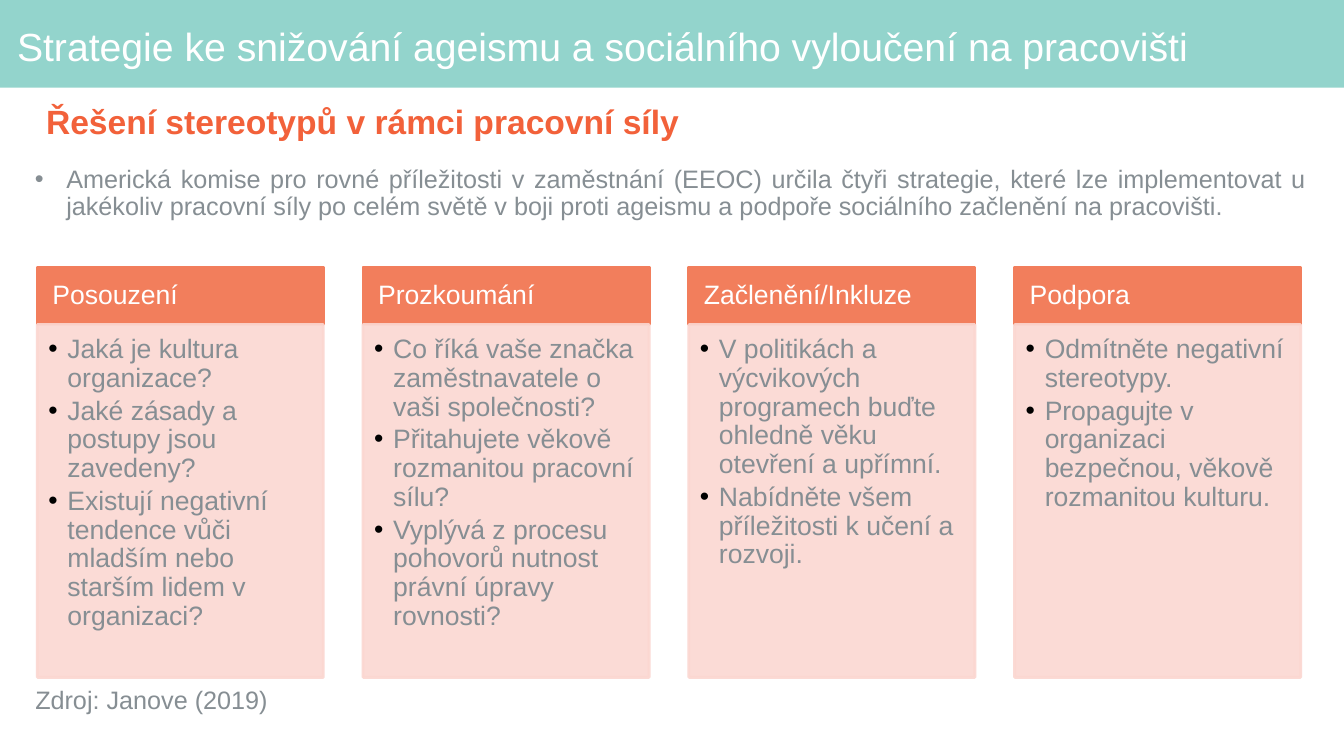
from lxml.etree import SubElement
from pptx import Presentation
from pptx.dml.color import RGBColor
from pptx.enum.shapes import MSO_SHAPE
from pptx.enum.text import MSO_ANCHOR, MSO_AUTO_SIZE, PP_ALIGN
from pptx.oxml.ns import qn
from pptx.util import Cm, Pt

COLORS = {
    "banner": "93D4CC",
    "heading": "F2613A",
    "card_head": "F27E5C",
    "card_body": "FBD7D1",
    "text": "868E93",
    "white": "FFFFFF",
    "black": "000000",
}

# Text formats: size, colour, frame and paragraph settings
TITLE = {"size": 28, "color": "white", "anchor": MSO_ANCHOR.MIDDLE,
         "insets": (0.15, 0.15, 0.15, 0.15)}
HEADING = {"size": 24, "color": "heading", "bold": True,
           "anchor": MSO_ANCHOR.MIDDLE, "align": PP_ALIGN.JUSTIFY,
           "before": 10, "indent": (1.27, -0.64)}
INTRO = {"size": 18, "color": "text", "align": PP_ALIGN.JUSTIFY,
         "before": 10, "indent": (1.42, -0.79), "bullet": "text"}
SOURCE = {"size": 18, "color": "text"}
CARD_HEAD = {"size": 19, "color": "white", "anchor": MSO_ANCHOR.MIDDLE,
             "align": PP_ALIGN.JUSTIFY, "insets": (0.38, 0.2, 0.38, 0.2)}
CARD_BODY = {"size": 19, "color": "text", "before": 2.9,
             "indent": (0.48, -0.48), "bullet": "black",
             "insets": (0.28, 0.28, 0.38, 0.43)}

# Card grid in centimetres
CARD_LEFT, CARD_PITCH, CARD_WIDTH = 0.94, 8.21, 7.21
HEAD_TOP, HEAD_HEIGHT, BODY_HEIGHT = 6.73, 1.45, 8.89

CARDS = [
    ("Posouzení", [
        "Jaká je kultura organizace?",
        "Jaké zásady a postupy jsou zavedeny?",
        "Existují negativní tendence vůči mladším nebo starším lidem v organizaci?",
    ]),
    ("Prozkoumání", [
        "Co říká vaše značka zaměstnavatele o vaši společnosti?",
        "Přitahujete věkově rozmanitou pracovní sílu?",
        "Vyplývá z procesu pohovorů nutnost právní úpravy rovnosti?",
    ]),
    ("Začlenění/Inkluze", [
        "V politikách a výcvikových programech buďte ohledně věku otevření a upřímní.",
        "Nabídněte všem příležitosti k učení a rozvoji.",
    ]),
    ("Podpora", [
        "Odmítněte negativní stereotypy.",
        "Propagujte v organizaci bezpečnou, věkově rozmanitou kulturu.",
    ]),
]


def rgb(name):
    return RGBColor.from_string(COLORS[name])


def set_values(target, values):
    for name, value in values.items():
        setattr(target, name, value)


def place(shape, left, top, width, height):
    set_values(shape, {"left": Cm(left), "top": Cm(top),
                       "width": Cm(width), "height": Cm(height)})


def set_bullet(para, color, indent):
    """Set the hanging indent and the bullet, or switch the bullet off."""
    properties = para._p.get_or_add_pPr()
    for name, length in zip(("marL", "indent"), indent):
        properties.set(name, str(Cm(length)))
    if color is None:
        SubElement(properties, qn("a:buNone"))
        return
    bullet_color = SubElement(properties, qn("a:buClr"))
    SubElement(bullet_color, qn("a:srgbClr"), val=COLORS[color])
    SubElement(properties, qn("a:buFont"), typeface="Arial")
    SubElement(properties, qn("a:buChar"), char="•")


def write(shape, lines, style):
    frame = shape.text_frame
    left, top, right, bottom = style.get("insets", (0.25, 0.13, 0.25, 0.13))
    set_values(frame, {
        "word_wrap": True,
        "auto_size": MSO_AUTO_SIZE.NONE,
        "vertical_anchor": style.get("anchor", MSO_ANCHOR.TOP),
        "margin_left": Cm(left), "margin_top": Cm(top),
        "margin_right": Cm(right), "margin_bottom": Cm(bottom),
    })
    for number, line in enumerate(lines):
        para = frame.add_paragraph() if number else frame.paragraphs[0]
        set_values(para, {
            "alignment": style.get("align", PP_ALIGN.LEFT),
            "line_spacing": 0.9,
            "space_before": Pt(style.get("before", 0)),
            "space_after": Pt(0),
        })
        set_bullet(para, style.get("bullet"), style.get("indent", (0, 0)))
        span = para.add_run()
        span.text = line
        set_values(span.font, {"name": "Arial", "size": Pt(style["size"]),
                               "bold": style.get("bold", False)})
        span.font.color.rgb = rgb(style["color"])


def add_box(page, frame, color, outlined=True, opacity=100):
    box = page.shapes.add_shape(MSO_SHAPE.RECTANGLE, *map(Cm, frame))
    box.shadow.inherit = False
    fills = [box.fill]
    if outlined:
        box.line.width = Pt(2)
        fills.append(box.line.fill)
    else:
        box.line.fill.background()
    for fill in fills:
        fill.solid()
        fill.fore_color.rgb = rgb(color)
    if opacity < 100:
        for node in box._element.spPr.iter(qn("a:srgbClr")):
            SubElement(node, qn("a:alpha"), val=str(opacity * 1000))
    return box


def add_card(page, left, heading, points):
    head = add_box(page, (left, HEAD_TOP, CARD_WIDTH, HEAD_HEIGHT), "card_head")
    write(head, [heading], CARD_HEAD)
    body = add_box(page, (left, HEAD_TOP + HEAD_HEIGHT, CARD_WIDTH, BODY_HEIGHT),
                   "card_body", opacity=89)
    write(body, points, CARD_BODY)


def main():
    deck = Presentation()
    set_values(deck, {"slide_width": Cm(33.87), "slide_height": Cm(19.05)})
    page = deck.slides.add_slide(deck.slide_layouts.get_by_name("Two Content"))
    title, heading, intro = page.placeholders

    # Banner behind the title
    banner = add_box(page, (0, 0, 33.87, 2.21), "banner", outlined=False)
    title._element.addprevious(banner._element)
    place(title, 0.28, 0.23, 33.17, 1.98)
    write(title, ["Strategie ke snižování ageismu a sociálního vyloučení na pracovišti"],
          TITLE)

    # Heading and introduction
    place(heading, 0.28, 2.36, 33.17, 1.52)
    write(heading, ["Řešení stereotypů v rámci pracovní síly"], HEADING)
    place(intro, 0, 4.06, 33.17, 2.2)
    write(intro, ["Americká komise pro rovné příležitosti v zaměstnání (EEOC) určila "
                  "čtyři strategie, které lze implementovat u jakékoliv pracovní síly "
                  "po celém světě v boji proti ageismu a podpoře sociálního začlenění "
                  "na pracovišti."], INTRO)

    # Strategy cards
    for column, (name, points) in enumerate(CARDS):
        add_card(page, CARD_LEFT + column * CARD_PITCH, name, points)

    # Source line
    source = page.shapes.add_textbox(Cm(0.64), Cm(17.2), Cm(12), Cm(1))
    write(source, ["Zdroj: Janove (2019)"], SOURCE)

    deck.save("out.pptx")


if __name__ == "__main__":
    main()
